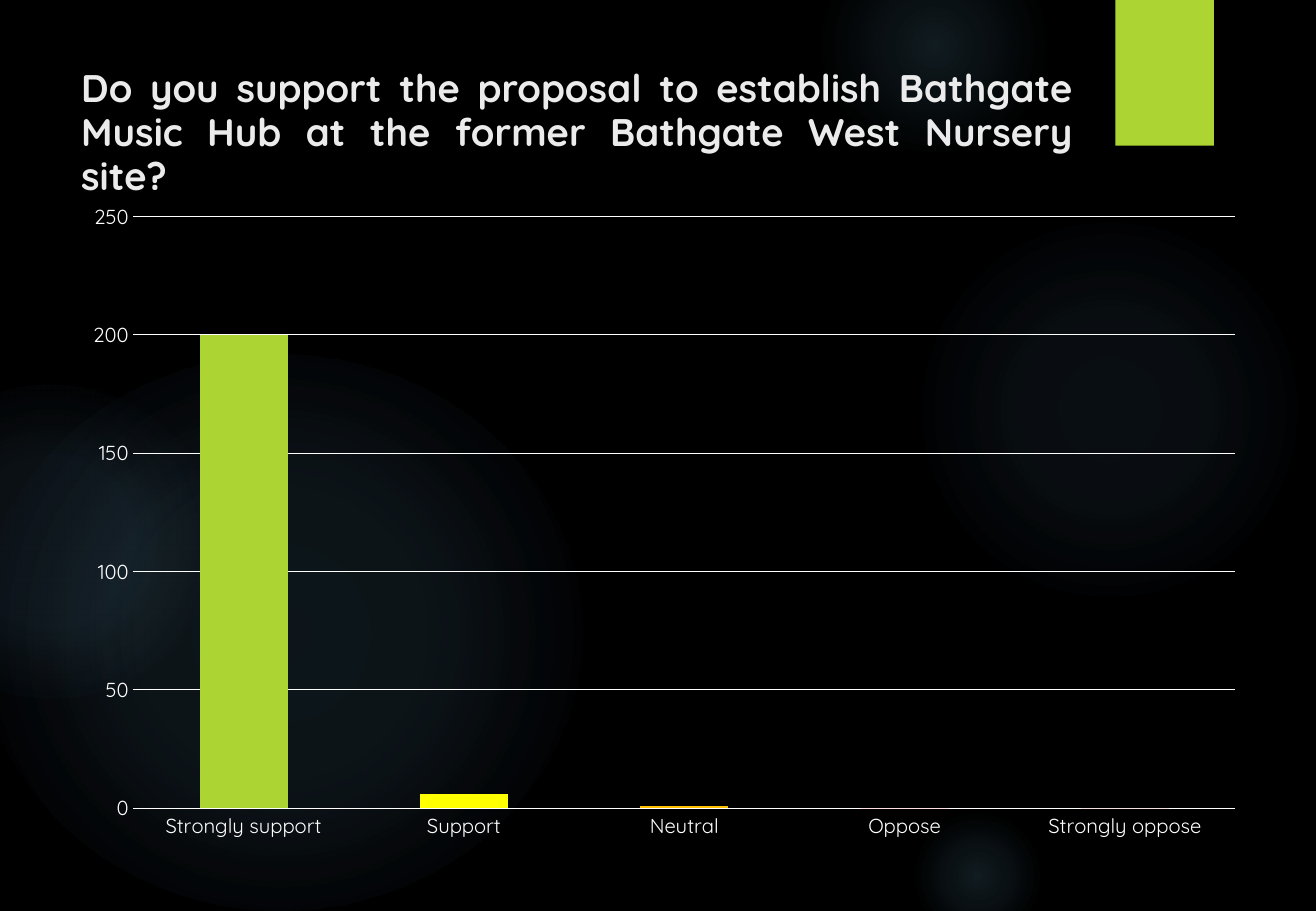
"""Build the survey result slide with a column chart on a glowing dark background."""
from lxml import etree
from pptx import Presentation
from pptx.chart.data import CategoryChartData
from pptx.dml.color import RGBColor
from pptx.enum.chart import XL_CHART_TYPE, XL_TICK_MARK
from pptx.enum.shapes import MSO_SHAPE
from pptx.enum.text import MSO_ANCHOR, PP_ALIGN
from pptx.oxml.ns import qn
from pptx.util import Inches, Pt

COLUMNS = XL_CHART_TYPE.COLUMN_CLUSTERED
NO_TICK = XL_TICK_MARK.NONE
ELLIPSE = MSO_SHAPE.OVAL
RECTANGLE = MSO_SHAPE.RECTANGLE
TOP = MSO_ANCHOR.TOP
JUSTIFY = PP_ALIGN.JUSTIFY

FONT = "Quicksand"
BLACK, WHITE, TITLE_GREY = "000000", "FFFFFF", "EBEBEB"
GREEN, GLOW_BLUE = "ACD433", "7AC4F0"

GLOWS = [
    ((7.46, 1.83, 3.34, 3.08), [(0, 7), (36, 6), (69, 0)]),
    ((6.74, -0.5, 1.9, 1.75), [(0, 14), (36, 7), (73, 0)]),
    ((7.46, 6.67, 1.17, 1.08), [(0, 14), (36, 7), (66, 0)]),
    ((-0.18, 2.92, 4.97, 4.58), [(0, 11), (36, 10), (75, 0)]),
    ((-0.99, 3.17, 2.8, 2.58), [(0, 8), (36, 8), (72, 0)]),
]
ANSWERS = {
    "Strongly support": (200, GREEN),
    "Support": (6, "FFFF00"),
    "Neutral": (1, "FFC000"),
    "Oppose": (0, "FF0000"),
    "Strongly oppose": (0, "C00000"),
}


def color(value):
    return RGBColor.from_string(value)


class SlideBuilder:
    def __init__(self, slide, font):
        self.slide = slide
        self.font = font

    def background(self, fill_color):
        fill = self.slide.background.fill
        fill.solid()
        fill.fore_color.rgb = color(fill_color)

    def style_font(self, font, size, font_color, bold=False):
        font.name = self.font
        font.size = Pt(size)
        font.bold = bold
        font.color.rgb = color(font_color)

    def shape(self, kind, box, fill_color):
        shape = self.slide.shapes.add_shape(kind, *map(Inches, box))
        shape.shadow.inherit = False
        shape.line.fill.background()
        shape.fill.solid()
        shape.fill.fore_color.rgb = color(fill_color)
        return shape

    def glow(self, box, stops):
        shape = self.shape(ELLIPSE, box, GLOW_BLUE)
        properties = shape._element.spPr
        gradient = etree.Element(qn("a:gradFill"), rotWithShape="1")
        stop_list = etree.SubElement(gradient, qn("a:gsLst"))
        for position, opacity in stops:
            stop = etree.SubElement(stop_list, qn("a:gs"), pos=str(position * 1000))
            stop_color = etree.SubElement(stop, qn("a:srgbClr"), val=GLOW_BLUE)
            etree.SubElement(stop_color, qn("a:alpha"), val=str(opacity * 1000))
        circle = etree.SubElement(gradient, qn("a:path"), path="circle")
        etree.SubElement(circle, qn("a:fillToRect"), dict.fromkeys("ltrb", "50000"))
        properties.replace(properties.find(qn("a:solidFill")), gradient)

    def title(self, box, text, size):
        text_frame = self.slide.shapes.add_textbox(*map(Inches, box)).text_frame
        text_frame.word_wrap = True
        text_frame.vertical_anchor = TOP
        text_frame.text = text
        paragraph = text_frame.paragraphs[0]
        paragraph.alignment = JUSTIFY
        paragraph.line_spacing = 0.96
        self.style_font(paragraph.runs[0].font, size, TITLE_GREY, bold=True)

    def column_chart(self, box, answers):
        data = CategoryChartData()
        data.categories = list(answers)
        data.add_series("Series 1", [count for count, _ in answers.values()])
        frame = self.slide.shapes.add_chart(COLUMNS, *map(Inches, box), data)
        chart = frame.chart
        chart.has_legend = False
        chart.has_title = False
        self.style_font(chart.font, 10, WHITE)

        for axis in (chart.category_axis, chart.value_axis):
            axis.major_tick_mark = NO_TICK
            axis.minor_tick_mark = NO_TICK
            axis.format.line.fill.background()
            self.style_font(axis.tick_labels.font, 12, WHITE)
        value_axis = chart.value_axis
        value_axis.minimum_scale = 0
        value_axis.maximum_scale = 250
        value_axis.major_unit = 50
        grid_line = value_axis.major_gridlines.format.line
        grid_line.color.rgb = color(WHITE)
        grid_line.width = Pt(0.75)

        plot = chart.plots[0]
        plot.gap_width = 150
        plot.vary_by_categories = False
        for index, (_, bar_color) in enumerate(answers.values()):
            fill = plot.series[0].points[index].format.fill
            fill.solid()
            fill.fore_color.rgb = color(bar_color)


def main():
    presentation = Presentation()
    presentation.slide_width = Inches(10.83)
    presentation.slide_height = Inches(7.5)
    slide = presentation.slides.add_slide(presentation.slide_layouts[6])
    builder = SlideBuilder(slide, FONT)

    builder.background(BLACK)
    for box, stops in GLOWS:
        builder.glow(box, stops)
    builder.shape(RECTANGLE, (9.18, 0, 0.81, 1.2), GREEN)
    builder.title(
        (0.57, 0.5, 8.36, 1.07),
        "Do you support the proposal to establish Bathgate Music Hub "
        "at the former Bathgate West Nursery site?",
        22.8,
    )
    builder.column_chart((0.57, 1.57, 9.79, 5.44), ANSWERS)
    presentation.save("out.pptx")


if __name__ == "__main__":
    main()
